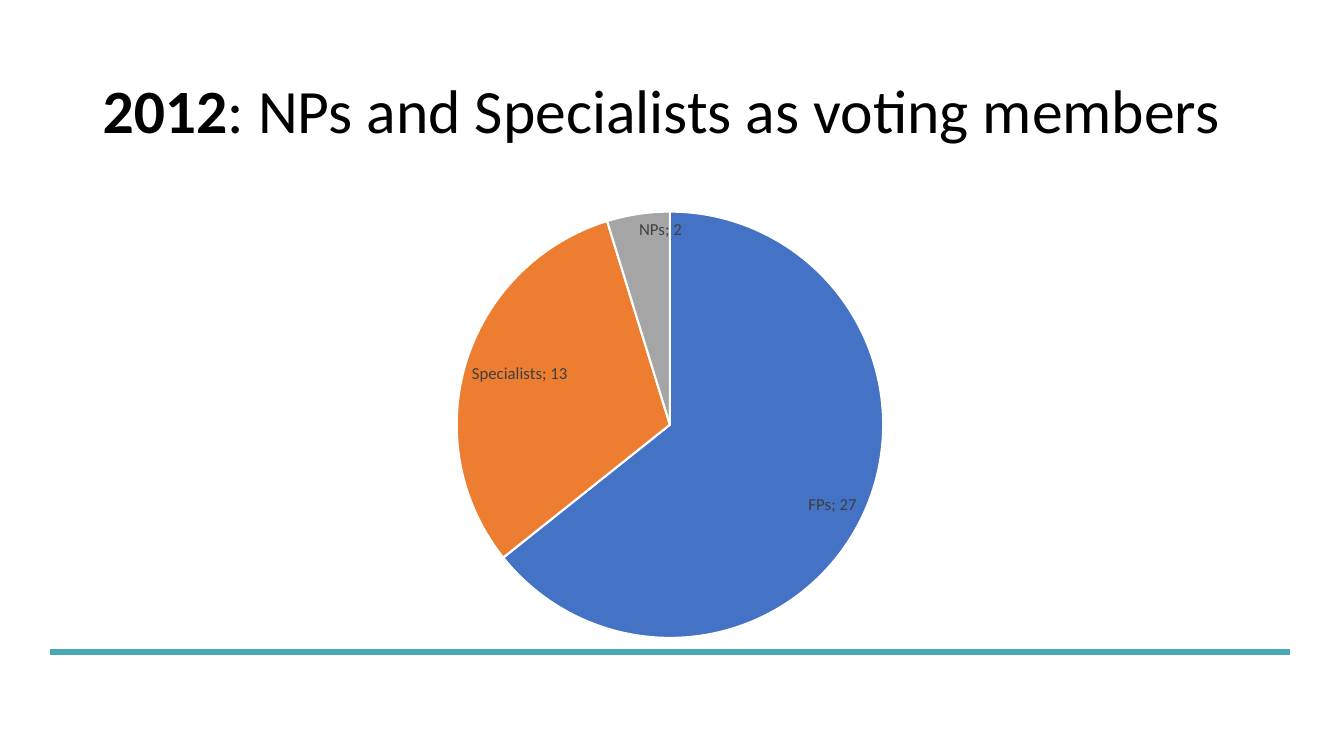
from lxml.etree import SubElement
from pptx import Presentation
from pptx.chart.data import CategoryChartData
from pptx.dml.color import RGBColor
from pptx.enum.chart import XL_CHART_TYPE, XL_LABEL_POSITION
from pptx.enum.shapes import MSO_CONNECTOR
from pptx.enum.text import MSO_ANCHOR
from pptx.oxml.ns import qn
from pptx.util import Inches, Pt

TITLE = [("2012", True), (": NPs and Specialists as voting members", False)]
MEMBERS = {"FPs": 27, "Specialists": 13, "NPs": 2}
THEME = {
    "font": "Calibri", "title_size": 44, "chart_size": 10, "label_size": 12,
    "text": "000000", "label": "404040", "rule": "49A8B6", "edge": "FFFFFF",
    "slices": ["4472C4", "ED7D31", "A5A5A5"],
}
CHART_BOX = (2.33, 1.71, 8.62, 4.76)
PIE_BOX = (4.53, 2.1, 4.23, 4.23)
RULE_LEFT, RULE_RIGHT, RULE_TOP = 0.5, 12.79, 6.47


def rgb(name):
    return RGBColor.from_string(THEME.get(name, name))


def style(font, size, color):
    font.name = THEME["font"]
    font.size = Pt(THEME[size])
    font.color.rgb = rgb(color)


def add_title(s):
    tf = s.shapes.add_textbox(*map(Inches, (0.92, 0.4, 11.5, 1.45))).text_frame
    tf.word_wrap = True
    tf.vertical_anchor = MSO_ANCHOR.MIDDLE
    p = tf.paragraphs[0]
    p.line_spacing = 0.9
    for text, bold in TITLE:
        r = p.add_run()
        r.text = text
        style(r.font, "title_size", "text")
        r.font.bold = bold


def add_rule(s):
    ends = map(Inches, (RULE_LEFT, RULE_TOP, RULE_RIGHT, RULE_TOP))
    line = s.shapes.add_connector(MSO_CONNECTOR.STRAIGHT, *ends)
    line.line.color.rgb = rgb("rule")
    line.line.width = Pt(4.5)
    SubElement(line._element.spPr, qn("a:effectLst"))


def place_pie(chart):
    plot_area = chart._chartSpace.chart.plotArea
    for old in plot_area.findall(qn("c:layout")):
        plot_area.remove(old)
    layout = SubElement(plot_area, qn("c:layout"))
    plot_area.insert(0, layout)
    manual = SubElement(layout, qn("c:manualLayout"))
    left, top, width, height = CHART_BOX
    x, y, w, h = PIE_BOX
    settings = {
        "layoutTarget": "inner", "xMode": "edge", "yMode": "edge",
        "x": (x - left) / width, "y": (y - top) / height,
        "w": w / width, "h": h / height,
    }
    for tag, value in settings.items():
        SubElement(manual, qn(f"c:{tag}")).set("val", str(value))


def add_pie(s):
    data = CategoryChartData()
    data.categories = list(MEMBERS)
    data.add_series("Series 1", list(MEMBERS.values()))
    chart = s.shapes.add_chart(XL_CHART_TYPE.PIE, *map(Inches, CHART_BOX), data).chart
    chart.has_title = False
    chart.has_legend = False
    style(chart.font, "chart_size", "text")
    plot = chart.plots[0]
    plot.vary_by_categories = True
    for i, color in enumerate(THEME["slices"]):
        fmt = plot.series[0].points[i].format
        fmt.fill.solid()
        fmt.fill.fore_color.rgb = rgb(color)
        fmt.line.color.rgb = rgb("edge")
        fmt.line.width = Pt(1.5)
    labels = plot.series[0].data_labels
    style(labels.font, "label_size", "label")
    labels.show_value = True
    labels.show_category_name = True
    labels.show_percentage = False
    labels.position = XL_LABEL_POSITION.INSIDE_END
    separator = SubElement(labels._element, qn("c:separator"))
    separator.text = "; "
    labels._element.find(qn("c:showBubbleSize")).addnext(separator)
    place_pie(chart)


def main():
    prs = Presentation()
    prs.slide_width, prs.slide_height = Inches(13.33), Inches(7.5)
    s = prs.slides.add_slide(prs.slide_layouts[6])
    add_title(s)
    add_rule(s)
    add_pie(s)
    prs.save("out.pptx")


if __name__ == "__main__":
    main()
